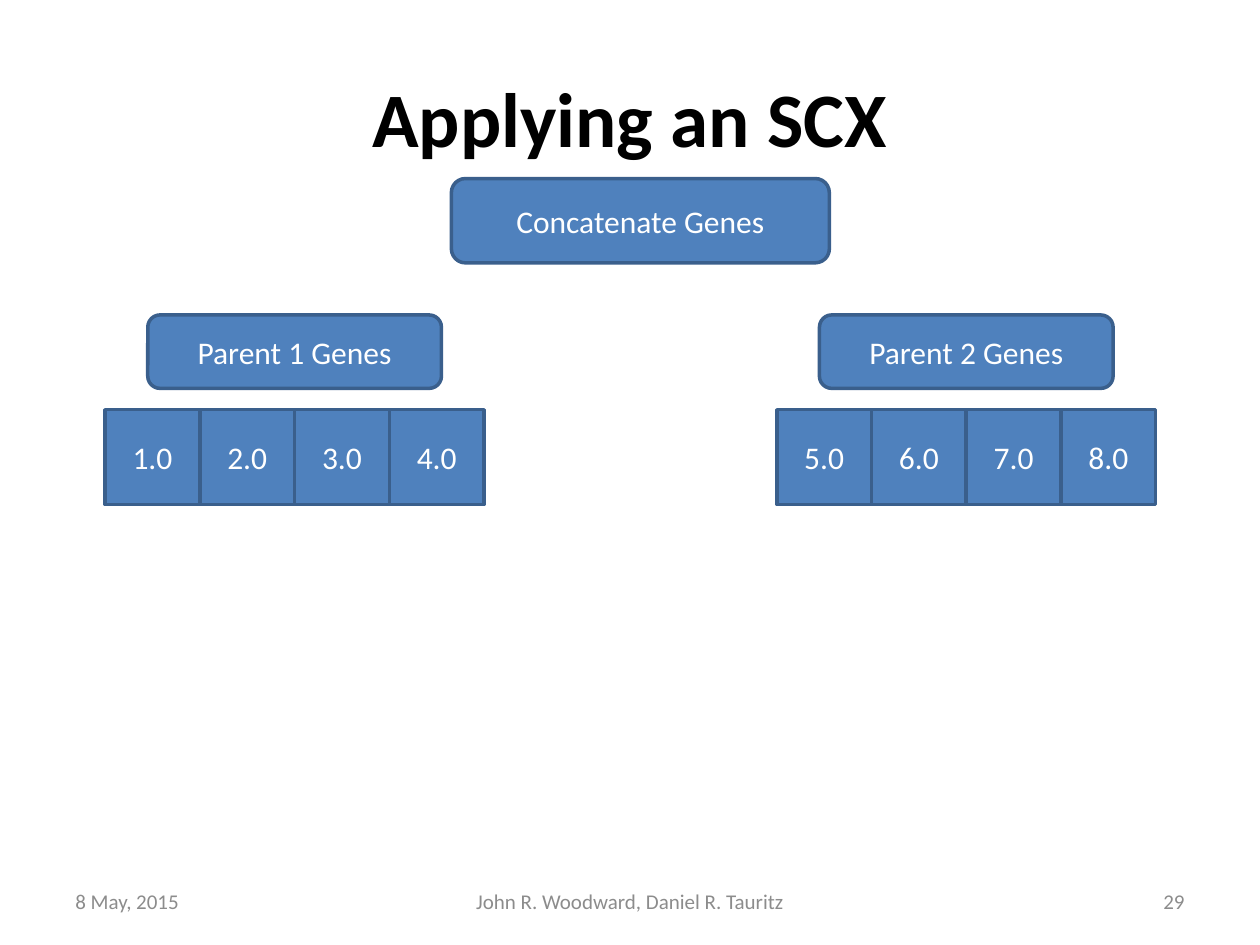
from pptx import Presentation
from pptx.dml.color import RGBColor
from pptx.enum.shapes import MSO_SHAPE
from pptx.enum.text import MSO_ANCHOR, PP_ALIGN
from pptx.util import Cm, Pt


def color(code):
    return RGBColor.from_string(code)


class Deck:
    font = "Calibri"
    fill = "4F81BD"
    edge = "3A5F8C"
    light = "FFFFFF"
    dark = "000000"
    gray = "8C8C8C"

    def __init__(self):
        self.prs = Presentation()
        self.prs.slide_width = Cm(25.4)
        self.prs.slide_height = Cm(19.05)
        self.slide = self.prs.slides.add_slide(self.prs.slide_layouts[5])

    def label(self, shape, text, size, ink, align=PP_ALIGN.CENTER, bold=False):
        frame = shape.text_frame
        frame.text = text
        frame.word_wrap = True
        frame.vertical_anchor = MSO_ANCHOR.MIDDLE
        para = frame.paragraphs[0]
        para.alignment = align
        para.font.name = self.font
        para.font.size = Pt(size)
        para.font.bold = bold
        para.font.color.rgb = color(ink)

    def title(self, text, x, y, w, h):
        head = self.slide.shapes.title
        head.left, head.top, head.width, head.height = Cm(x), Cm(y), Cm(w), Cm(h)
        self.label(head, text, 44, self.dark, bold=True)

    def box(self, text, x, y, w, h, kind=MSO_SHAPE.ROUNDED_RECTANGLE, home=None):
        """Add a filled box to the slide, or to the group given as home."""
        shapes = (home or self.slide).shapes
        shape = shapes.add_shape(kind, Cm(x), Cm(y), Cm(w), Cm(h))
        shape.shadow.inherit = False
        shape.fill.solid()
        shape.fill.fore_color.rgb = color(self.fill)
        shape.line.color.rgb = color(self.edge)
        shape.line.width = Pt(2)
        self.label(shape, text, 18, self.light)

    def genes(self, values, x, y, side):
        """Add a grouped row of touching squares, one per gene."""
        group = self.slide.shapes.add_group_shape()
        for i, value in enumerate(values):
            self.box(f"{value:.1f}", x + i * side, y, side, side,
                     MSO_SHAPE.RECTANGLE, group)

    def note(self, text, x, w, align):
        """Add one part of the footer line."""
        area = self.slide.shapes.add_textbox(Cm(x), Cm(17.65), Cm(w), Cm(1.02))
        self.label(area, text, 12, self.gray, align)

    def save(self):
        self.prs.save("out.pptx")


def main():
    deck = Deck()
    deck.title("Applying an SCX", 1.27, 0.76, 22.86, 3.18)

    side = 1.91
    width = 5.92
    parents = [(2.12, range(1, 5)), (15.66, range(5, 9))]
    for num, (left, values) in enumerate(parents, 1):
        deck.genes(values, left, 8.26, side)
        inset = (len(values) * side - width) / 2
        deck.box(f"Parent {num} Genes", left + inset, 6.35, width, 1.48)
    deck.box("Concatenate Genes", 9.1, 3.6, 7.62, 1.7)

    deck.note("8 May, 2015", 1.27, 5.93, PP_ALIGN.LEFT)
    deck.note("John R. Woodward, Daniel R. Tauritz", 8.68, 8.04, PP_ALIGN.CENTER)
    deck.note("29", 18.2, 5.93, PP_ALIGN.RIGHT)
    deck.save()


if __name__ == "__main__":
    main()
